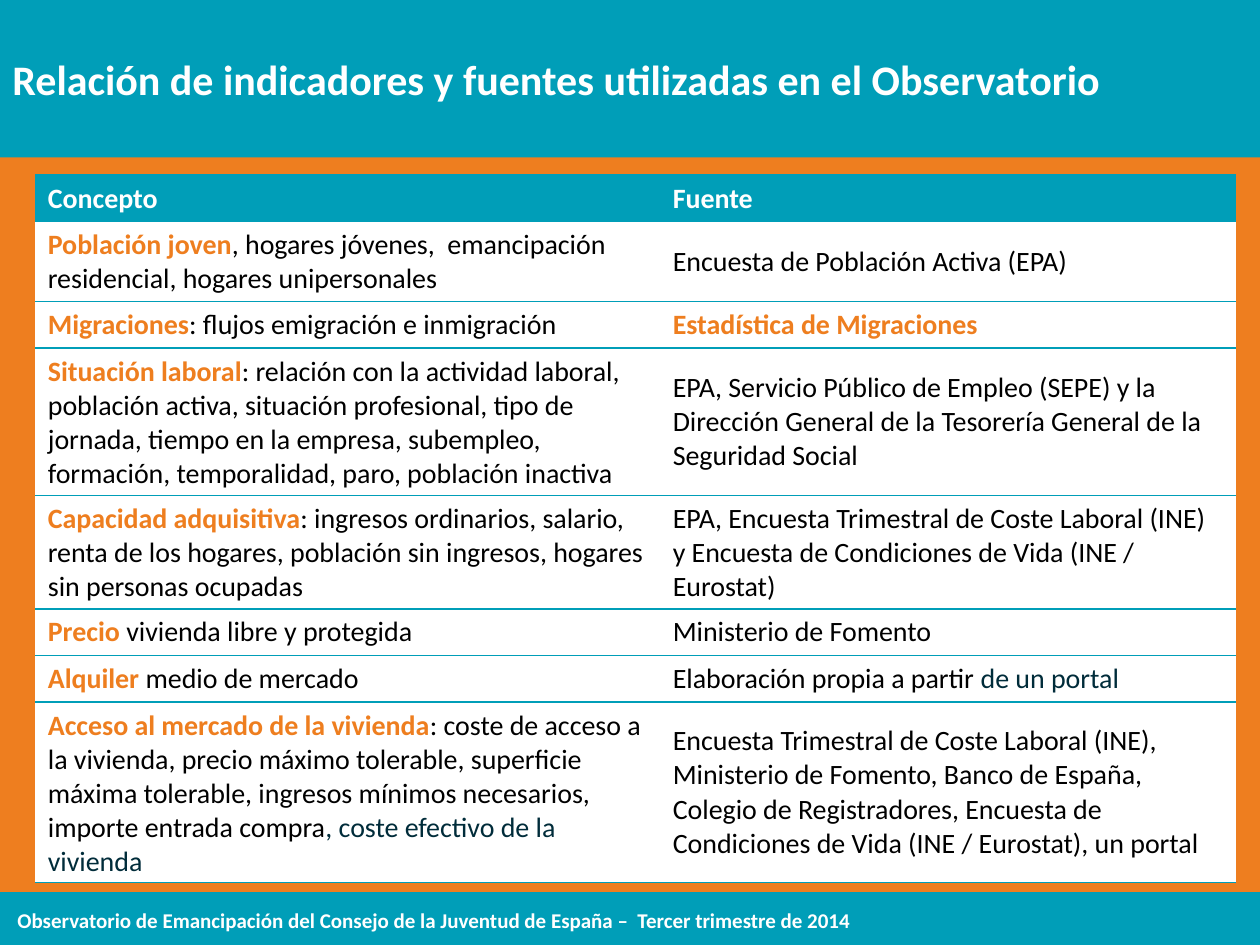
from dataclasses import dataclass

from lxml.etree import SubElement
from pptx import Presentation
from pptx.dml.color import RGBColor
from pptx.enum.shapes import MSO_SHAPE
from pptx.enum.text import MSO_ANCHOR, PP_ALIGN
from pptx.oxml.ns import qn
from pptx.util import Inches, Pt

SLIDE_W, SLIDE_H = 10, 7.5


@dataclass(frozen=True)
class Theme:
    font: str = "Calibri"
    teal: str = "009EB8"
    orange: str = "EE7E1F"
    navy: str = "002C3A"
    black: str = "000000"
    white: str = "FFFFFF"
    title: int = 24
    body: int = 16
    footer: int = 12
    rule: int = 1


T = Theme()
KEY = dict(color=T.orange, bold=True)
HEAD = dict(color=T.white, bold=True)
NEW = dict(color=T.navy)
TEXT = {}

COLUMNS = [4.96, 4.57]
ROWS = [
    (0.37, [("Concepto", HEAD)], [("Fuente", HEAD)]),
    (0.63,
     [("Población joven", KEY),
      (", hogares jóvenes,  emancipación residencial, hogares unipersonales", TEXT)],
     [("Encuesta de Población Activa (EPA)", TEXT)]),
    (0.37,
     [("Migraciones", KEY), (": flujos emigración e inmigración", TEXT)],
     [("Estadística de Migraciones", KEY)]),
    (1.17,
     [("Situación laboral", KEY),
      (": relación con la actividad laboral, población activa, situación profesional, "
       "tipo de jornada, tiempo en la empresa, subempleo, formación, temporalidad, "
       "paro, población inactiva", TEXT)],
     [("EPA, Servicio Público de Empleo (SEPE) y la Dirección General de la Tesorería "
       "General de la Seguridad Social", TEXT)]),
    (0.9,
     [("Capacidad adquisitiva", KEY),
      (": ingresos ordinarios, salario, renta de los hogares, población sin ingresos, "
       "hogares sin personas ocupadas", TEXT)],
     [("EPA, Encuesta Trimestral de Coste Laboral (INE) y Encuesta de Condiciones de "
       "Vida (INE / Eurostat)", TEXT)]),
    (0.37,
     [("Precio ", KEY), ("vivienda libre y protegida", TEXT)],
     [("Ministerio de Fomento", TEXT)]),
    (0.37,
     [("Alquiler", KEY), (" medio de mercado", TEXT)],
     [("Elaboración propia a partir ", TEXT), ("de un portal", NEW)]),
    (1.43,
     [("Acceso al mercado de la vivienda", KEY),
      (": coste de acceso a la vivienda, precio máximo tolerable, superficie máxima "
       "tolerable, ingresos mínimos necesarios, importe entrada compra", TEXT),
      (", coste efectivo de la vivienda", NEW)],
     [("Encuesta Trimestral de Coste Laboral (INE), Ministerio de Fomento, Banco de "
       "España, Colegio de Registradores, Encuesta de Condiciones de Vida "
       "(INE / Eurostat), un portal", TEXT)]),
]


def rgb(color):
    return RGBColor.from_string(color)


def add_run(p, text, size=T.body, color=T.black, bold=False):
    r = p.add_run()
    r.text = text
    r.font.name = T.font
    r.font.size = Pt(size)
    r.font.bold = bold
    r.font.color.rgb = rgb(color)


def add_band(s, box):
    sp = s.shapes.add_shape(MSO_SHAPE.RECTANGLE, *map(Inches, box))
    sp.shadow.inherit = False
    sp.fill.solid()
    sp.fill.fore_color.rgb = rgb(T.teal)
    sp.line.fill.background()
    return sp


def add_title(s, box, text):
    tf = add_band(s, box).text_frame
    tf.word_wrap = True
    tf.vertical_anchor = MSO_ANCHOR.MIDDLE
    p = tf.paragraphs[0]
    p.alignment = PP_ALIGN.LEFT
    add_run(p, text, size=T.title, color=T.white, bold=True)


def add_footer(s, box, text):
    add_band(s, box)
    left, top, width, height = box
    text_box = left + 0.04, top + 0.07, width * 0.77, 0.3
    tf = s.shapes.add_textbox(*map(Inches, text_box)).text_frame
    tf.word_wrap = True
    add_run(tf.paragraphs[0], text, size=T.footer, color=T.white, bold=True)


def set_borders(cell):
    tcPr = cell._tc.get_or_add_tcPr()
    for i, side in enumerate(("lnL", "lnR", "lnT", "lnB")):
        ln = SubElement(tcPr, qn(f"a:{side}"), w=str(Pt(T.rule)))
        if side in ("lnT", "lnB"):
            fill = SubElement(ln, qn("a:solidFill"))
            SubElement(fill, qn("a:srgbClr"), val=T.teal)
        else:
            SubElement(ln, qn("a:noFill"))
        tcPr.insert(i, ln)


def add_sources(s, box, rows):
    table = s.shapes.add_table(len(rows), len(COLUMNS), *map(Inches, box)).table
    table.horz_banding = False
    for col, width in zip(table.columns, COLUMNS):
        col.width = Inches(width)
    for i, (height, *contents) in enumerate(rows):
        table.rows[i].height = Inches(height)
        for j, runs in enumerate(contents):
            cell = table.cell(i, j)
            cell.vertical_anchor = MSO_ANCHOR.MIDDLE
            cell.fill.solid()
            cell.fill.fore_color.rgb = rgb(T.white if i else T.teal)
            set_borders(cell)
            for text, style in runs:
                add_run(cell.text_frame.paragraphs[0], text, **style)


def main():
    prs = Presentation()
    prs.slide_width, prs.slide_height = Inches(SLIDE_W), Inches(SLIDE_H)
    s = prs.slides.add_slide(prs.slide_layouts[6])
    s.background.fill.solid()
    s.background.fill.fore_color.rgb = rgb(T.orange)

    title_h, footer_h = SLIDE_H / 6, 0.42
    add_footer(s, (0, SLIDE_H - footer_h, SLIDE_W, footer_h),
               "Observatorio de Emancipación del Consejo de la Juventud de España –  "
               "Tercer trimestre de 2014")
    add_title(s, (0, 0, SLIDE_W, title_h),
              "Relación de indicadores y fuentes utilizadas en el Observatorio")
    add_sources(s, (0.28, title_h + 0.14, sum(COLUMNS), sum(row[0] for row in ROWS)), ROWS)
    prs.save("out.pptx")


if __name__ == "__main__":
    main()
